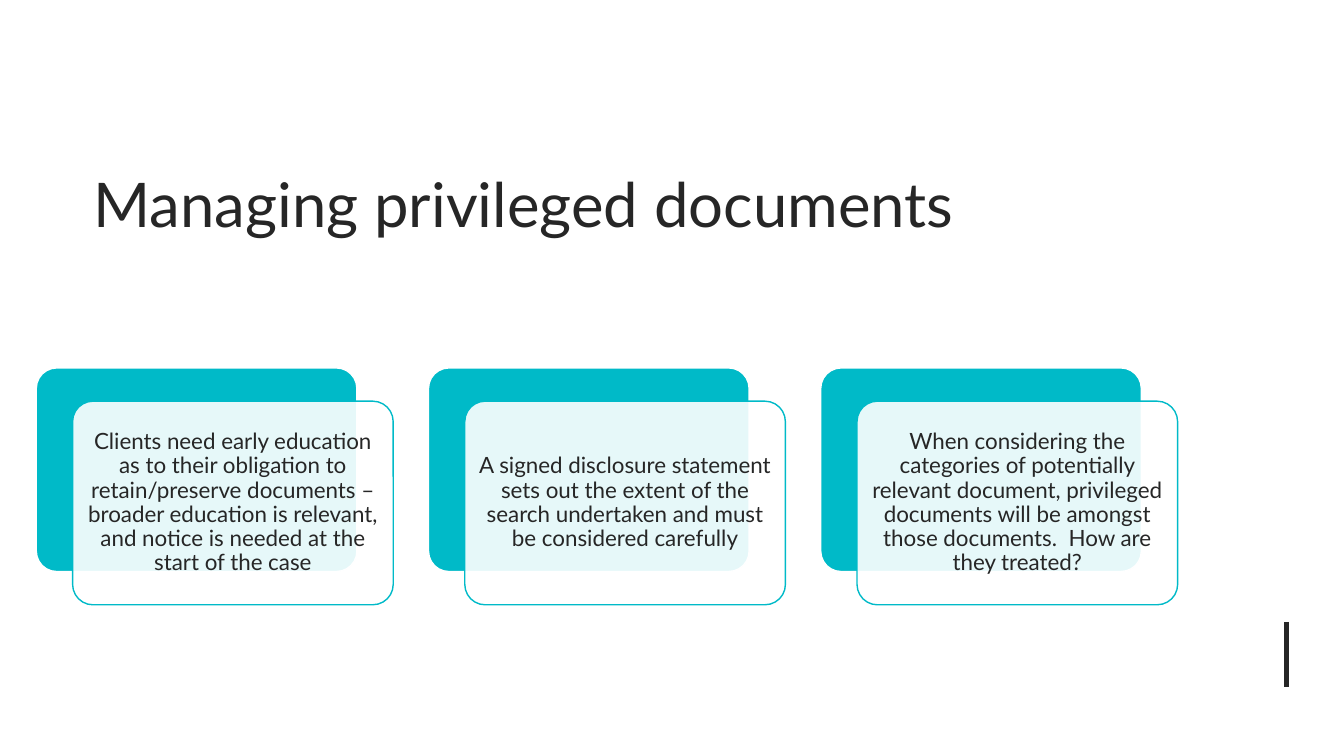
"""Build the slide on managing privileged documents: a title above three layered cards."""
import pptx
import pptx.dml.color
import pptx.enum.shapes
import pptx.enum.text
import pptx.oxml.ns
import pptx.util
from lxml import etree

PX = 9144
INK, TEAL, WHITE = "262626", "00BAC8", "FFFFFF"
CARD_WIDTH, CARD_HEIGHT, CARD_PITCH = 318, 202, 389
CARD_LEFT, CARD_TOP = 36, 365
FRONT_SHIFT_X, FRONT_SHIFT_Y = 36, 33
CARD_INSET = 7

POINTS = [
    "Clients need early education as to their obligation to retain/preserve documents – "
    "broader education is relevant, and notice is needed at the start of the case",
    "A signed disclosure statement sets out the extent of the search undertaken "
    "and must be considered carefully",
    "When considering the categories of potentially relevant document, privileged "
    "documents will be amongst those documents.  How are they treated?",
]


def color(hex_string):
    return pptx.dml.color.RGBColor.from_string(hex_string)


def add_card(left, top, fill, line):
    card = slide.shapes.add_shape(
        pptx.enum.shapes.MSO_SHAPE.ROUNDED_RECTANGLE,
        left * PX, top * PX, CARD_WIDTH * PX, CARD_HEIGHT * PX)
    card.adjustments[0] = 0.1
    card.shadow.inherit = False
    card.fill.solid()
    card.fill.fore_color.rgb = color(fill)
    card.line.color.rgb = color(line)
    card.line.width = pptx.util.Pt(1)
    return card


presentation = pptx.Presentation()
presentation.slide_width = 1333 * PX
presentation.slide_height = 750 * PX
slide = presentation.slides.add_slide(presentation.slide_layouts[6])
slide.background.fill.solid()
slide.background.fill.fore_color.rgb = color(WHITE)

margin_rule = slide.shapes.add_connector(
    pptx.enum.shapes.MSO_CONNECTOR.STRAIGHT, 1276 * PX, 617 * PX, 1276 * PX, 682 * PX)
margin_rule.line.color.rgb = color(INK)
margin_rule.line.width = pptx.util.Pt(3)
etree.SubElement(margin_rule._element.spPr, pptx.oxml.ns.qn("a:effectLst"))

title = slide.shapes.add_textbox(83 * PX, 94 * PX, 1083 * PX, 149 * PX).text_frame
title.word_wrap = True
title.vertical_anchor = pptx.enum.text.MSO_ANCHOR.BOTTOM
heading = title.paragraphs[0]
heading.text = "Managing privileged documents"
heading.font.name = "Lato"
heading.font.size = pptx.util.Pt(44)
heading.font.color.rgb = color(INK)

for index, point in enumerate(POINTS):
    left = CARD_LEFT + index * CARD_PITCH
    add_card(left, CARD_TOP, TEAL, WHITE)
    front = add_card(left + FRONT_SHIFT_X, CARD_TOP + FRONT_SHIFT_Y, WHITE, TEAL)
    white_fill = front.fill._xPr.find(".//" + pptx.oxml.ns.qn("a:srgbClr"))
    etree.SubElement(white_fill, pptx.oxml.ns.qn("a:alpha"), val="90000")

    frame = front.text_frame
    frame.word_wrap = True
    frame.vertical_anchor = pptx.enum.text.MSO_ANCHOR.MIDDLE
    frame.margin_left = frame.margin_right = CARD_INSET * PX
    frame.margin_top = frame.margin_bottom = CARD_INSET * PX
    statement = frame.paragraphs[0]
    statement.text = point
    statement.alignment = pptx.enum.text.PP_ALIGN.CENTER
    statement.line_spacing = 0.9
    statement.font.name = "Lato"
    statement.font.size = pptx.util.Pt(16)
    statement.font.color.rgb = color(INK)

presentation.save("out.pptx")
